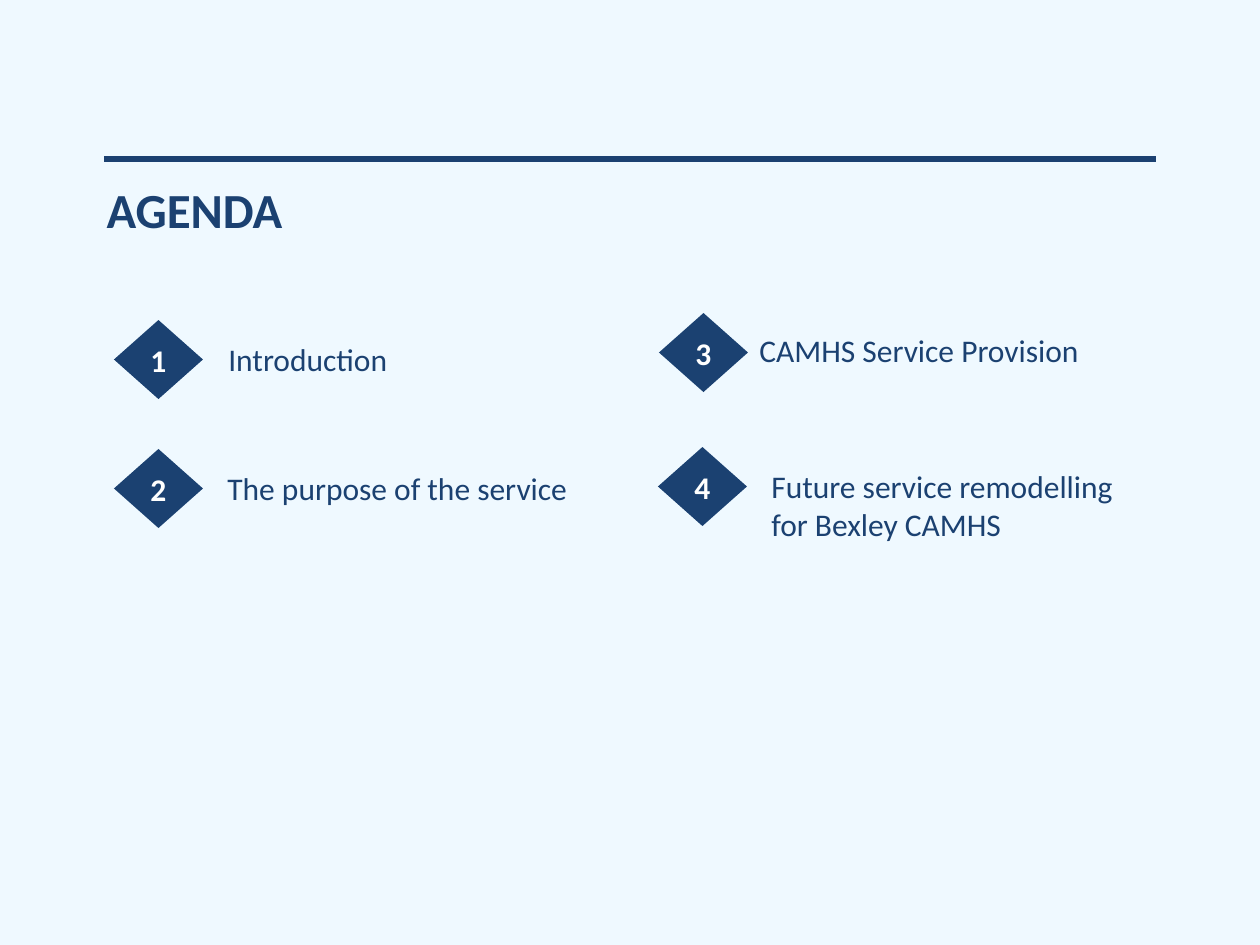
from dataclasses import dataclass

from pptx import Presentation
from pptx.dml.color import RGBColor
from pptx.enum.shapes import MSO_SHAPE
from pptx.enum.text import MSO_ANCHOR, MSO_AUTO_SIZE, PP_ALIGN
from pptx.util import Emu, Pt

RECTANGLE, DIAMOND = MSO_SHAPE.RECTANGLE, MSO_SHAPE.DIAMOND
TOP, MIDDLE = MSO_ANCHOR.TOP, MSO_ANCHOR.MIDDLE
LEFT, CENTER = PP_ALIGN.LEFT, PP_ALIGN.CENTER
NO_AUTOFIT, GROW = MSO_AUTO_SIZE.NONE, MSO_AUTO_SIZE.SHAPE_TO_FIT_TEXT
PX_PER_INCH = 126
TITLE_ONLY = 5


@dataclass(frozen=True)
class Theme:
    background: RGBColor = RGBColor(0xEF, 0xF9, 0xFF)
    navy: RGBColor = RGBColor(0x1B, 0x41, 0x71)
    white: RGBColor = RGBColor(0xFF, 0xFF, 0xFF)
    font: str = "Calibri"
    title_size: int = 28
    body_size: int = 18


@dataclass(frozen=True)
class Box:
    """Position and size in px."""
    left: int
    top: int
    width: int
    height: int

    def emu(self) -> tuple[Emu, ...]:
        return tuple(px(n) for n in (self.left, self.top, self.width, self.height))


@dataclass(frozen=True)
class AgendaItem:
    text: str
    marker_left: int
    marker_top: int
    label: Box


THEME = Theme()
RULE = Box(104, 156, 1052, 6)
TITLE = Box(94, 173, 1052, 72)
MARKER_WIDTH, MARKER_HEIGHT = 89, 79
ITEMS = [
    AgendaItem("Introduction", 114, 320, Box(216, 334, 377, 50)),
    AgendaItem("The purpose of the service", 114, 449, Box(215, 463, 377, 50)),
    AgendaItem("CAMHS Service Provision", 659, 313, Box(747, 325, 377, 50)),
    AgendaItem("Future service remodelling for Bexley CAMHS", 658, 447,
               Box(759, 461, 397, 89)),
]


def px(n: int) -> Emu:
    return Emu(round(n * 914400 / PX_PER_INCH))


def write(sp, text: str, size: int, color: RGBColor, bold: bool = False,
          align=LEFT, anchor=TOP, fit=GROW) -> None:
    tf = sp.text_frame
    tf.word_wrap = True
    tf.auto_size = fit
    tf.vertical_anchor = anchor
    p = tf.paragraphs[0]
    p.alignment = align
    r = p.add_run()
    r.text = text
    r.font.name = THEME.font
    r.font.size = Pt(size)
    r.font.bold = bold
    r.font.color.rgb = color


def add_solid(s, kind, box: Box):
    sp = s.shapes.add_shape(kind, *box.emu())
    sp.shadow.inherit = False
    sp.fill.solid()
    sp.fill.fore_color.rgb = THEME.navy
    sp.line.fill.background()
    return sp


def add_title(s) -> None:
    sp = s.shapes.title
    sp.left, sp.top, sp.width, sp.height = TITLE.emu()
    write(sp, "AGENDA", THEME.title_size, THEME.navy, bold=True)


def add_item(s, number: int, item: AgendaItem) -> None:
    marker = add_solid(s, DIAMOND, Box(item.marker_left, item.marker_top,
                                       MARKER_WIDTH, MARKER_HEIGHT))
    tf = marker.text_frame
    tf.margin_left = tf.margin_right = 0
    write(marker, str(number), THEME.body_size, THEME.white, bold=True,
          align=CENTER, anchor=MIDDLE, fit=NO_AUTOFIT)
    label = s.shapes.add_textbox(*item.label.emu())
    write(label, item.text, THEME.body_size, THEME.navy)


def main() -> None:
    prs = Presentation()
    prs.slide_width, prs.slide_height = px(1260), px(945)
    s = prs.slides.add_slide(prs.slide_layouts[TITLE_ONLY])
    s.background.fill.solid()
    s.background.fill.fore_color.rgb = THEME.background
    add_solid(s, RECTANGLE, RULE)
    add_title(s)
    for number, item in enumerate(ITEMS, start=1):
        add_item(s, number, item)
    prs.save("out.pptx")


if __name__ == "__main__":
    main()
